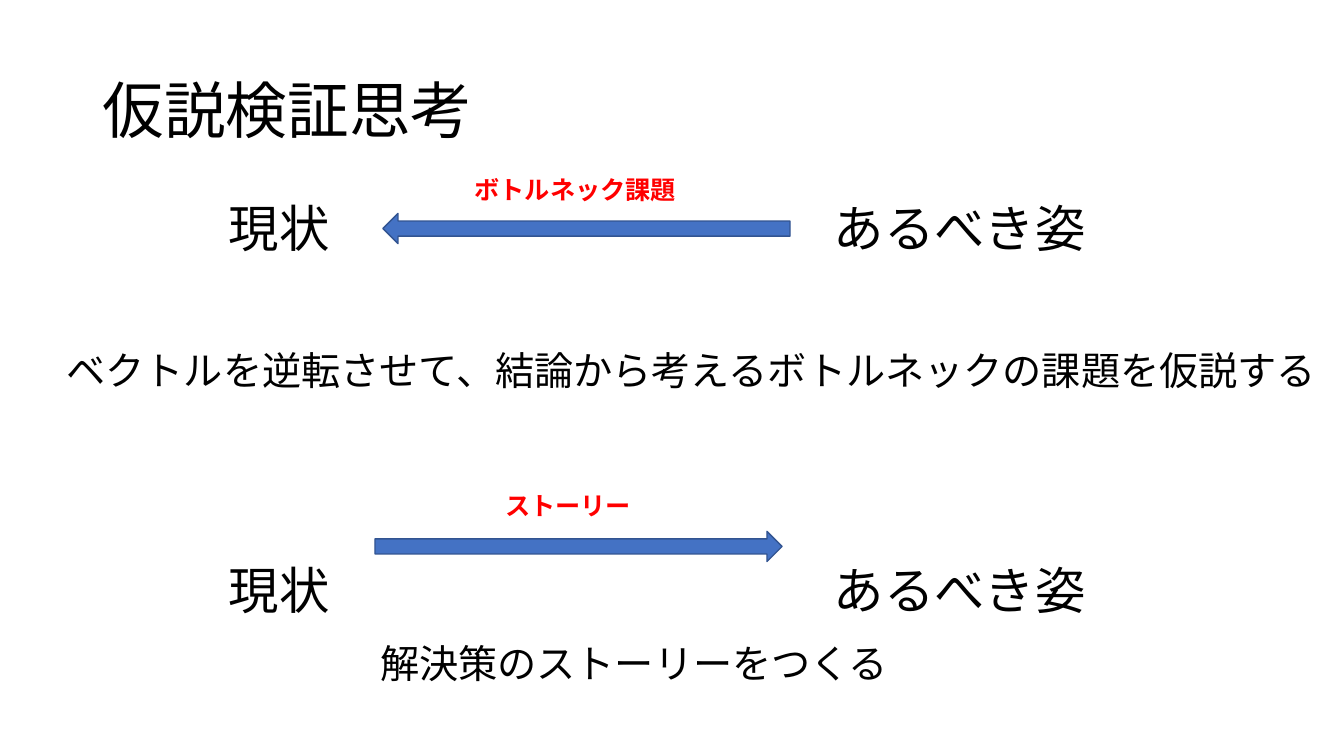
from dataclasses import dataclass

from pptx import Presentation
from pptx.dml.color import RGBColor
from pptx.enum.shapes import MSO_SHAPE
from pptx.enum.text import MSO_ANCHOR
from pptx.oxml.ns import qn
from pptx.util import Cm, Pt


@dataclass(frozen=True)
class Theme:
    font: str = "Noto Sans CJK JP"
    ink: RGBColor = RGBColor(0x00, 0x00, 0x00)
    accent: RGBColor = RGBColor(0xFF, 0x00, 0x00)
    arrow_fill: RGBColor = RGBColor(0x44, 0x72, 0xC4)
    arrow_line: RGBColor = RGBColor(0x32, 0x54, 0x91)
    title: int = 44
    state: int = 36
    message: int = 28
    caption: int = 18


THEME = Theme()


def add_text(slide, text, left, middle, width, size, color=THEME.ink,
             bold=False, indent=0):
    """Place text with its left edge and vertical middle given in cm."""
    height = 2.4
    box = slide.shapes.add_textbox(Cm(left), Cm(middle - height / 2), Cm(width), Cm(height))
    frame = box.text_frame
    frame.word_wrap = True
    frame.vertical_anchor = MSO_ANCHOR.MIDDLE
    frame.margin_left = frame.margin_right = frame.margin_top = frame.margin_bottom = 0
    paragraph = frame.paragraphs[0]
    paragraph.line_spacing = 0.9
    paragraph.add_run().text = text
    font = paragraph.font
    font.name = THEME.font
    font.size = Pt(size)
    font.bold = bold
    font.color.rgb = color
    properties = paragraph._p.get_or_add_pPr()
    properties.set("indent", str(Pt(indent)))
    east_asian = properties.find(qn("a:defRPr")).makeelement(qn("a:ea"), {"typeface": THEME.font})
    properties.find(qn("a:defRPr")).find(qn("a:latin")).addnext(east_asian)
    run_font = paragraph.runs[0]._r.get_or_add_rPr()
    run_font.set("lang", "ja-JP")
    run_font.append(run_font.makeelement(qn("a:ea"), {"typeface": THEME.font}))


def add_arrow(slide, direction, left, top):
    arrow = slide.shapes.add_shape(direction, Cm(left), Cm(top), Cm(10.26), Cm(0.76))
    arrow.shadow.inherit = False
    arrow.fill.solid()
    arrow.fill.fore_color.rgb = THEME.arrow_fill
    arrow.line.color.rgb = THEME.arrow_line
    arrow.line.width = Pt(1)


def add_states(slide, middle):
    add_text(slide, "現状", 5.77, middle, 3, THEME.state)
    add_text(slide, "あるべき姿", 21.01, middle, 7, THEME.state)


def add_caption(slide, text, left, middle):
    add_text(slide, text, left, middle, 6.4, THEME.caption, THEME.accent, bold=True)


def main():
    presentation = Presentation()
    presentation.slide_width = Cm(33.87)
    presentation.slide_height = Cm(19.05)
    slide = presentation.slides.add_slide(presentation.slide_layouts[6])

    add_text(slide, "仮説検証思考", 2.59, 2.86, 28.7, THEME.title)

    add_states(slide, 5.82)
    add_arrow(slide, MSO_SHAPE.LEFT_ARROW, 9.65, 5.38)
    add_caption(slide, "ボトルネック課題", 11.96, 4.83)
    add_text(slide, "ベクトルを逆転させて、結論から考えるボトルネックの課題を仮説する",
             0.69, 9.4, 32.9, THEME.message, indent=THEME.message)

    add_states(slide, 14.96)
    add_arrow(slide, MSO_SHAPE.RIGHT_ARROW, 9.45, 13.39)
    add_caption(slide, "ストーリー", 12.73, 12.78)
    add_text(slide, "解決策のストーリーをつくる", 9.58, 16.78, 14, THEME.message)

    presentation.save("out.pptx")


if __name__ == "__main__":
    main()
